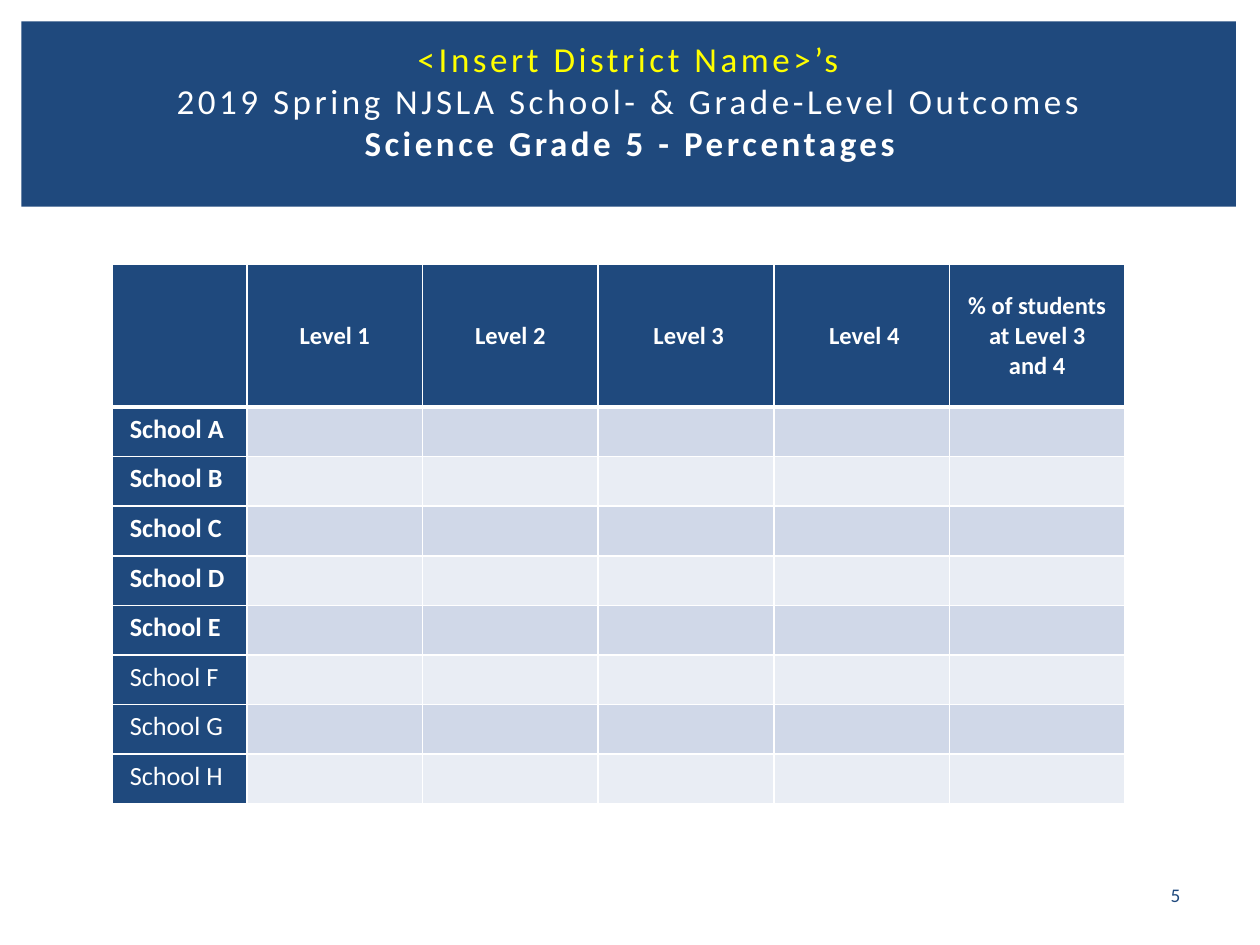
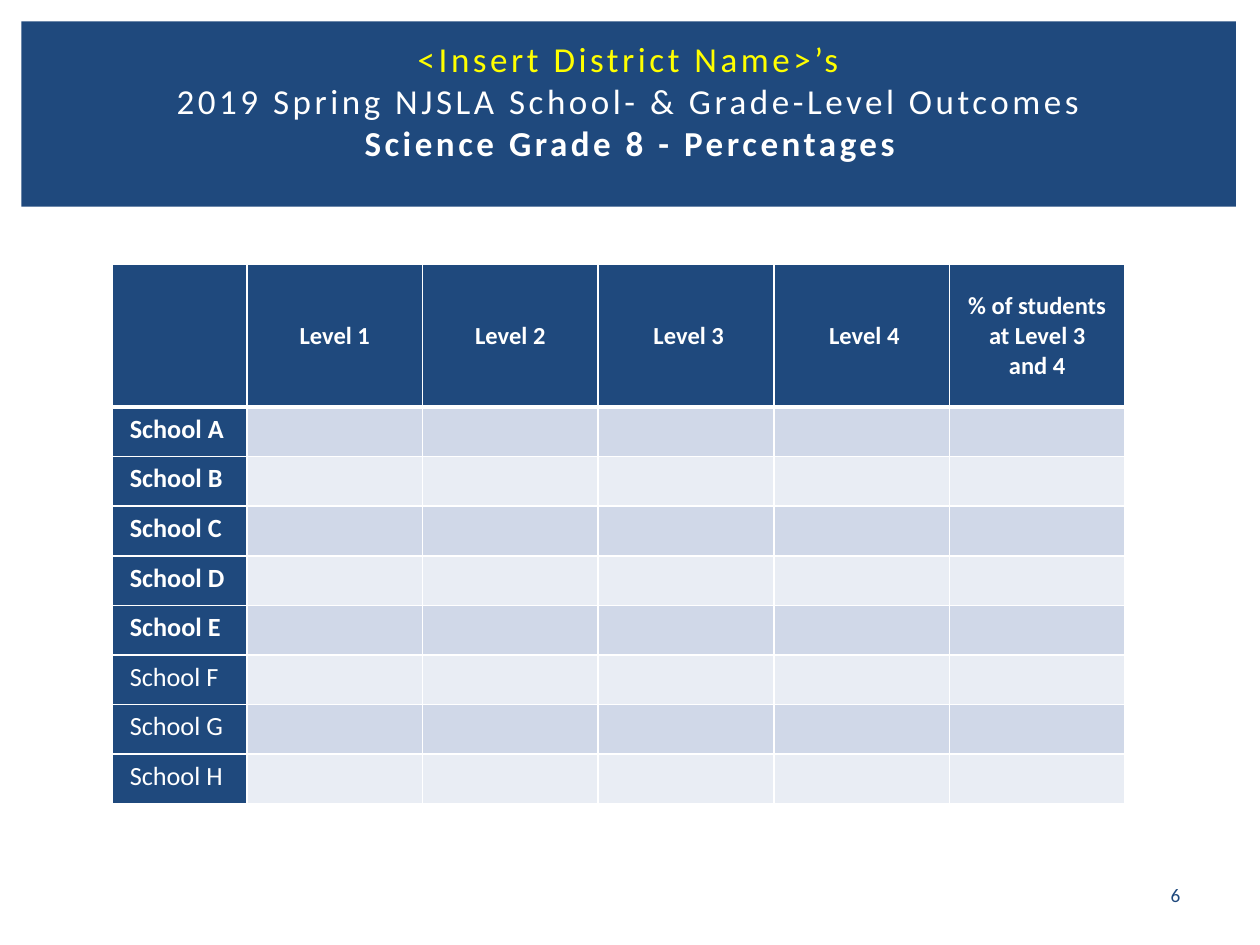
from dataclasses import dataclass
from typing import Any

from lxml import etree
from pptx import Presentation
from pptx import util as u
from pptx.dml.color import RGBColor
from pptx.enum import shapes, text
from pptx.oxml import ns

NAVY = RGBColor(0x1F, 0x49, 0x7D)
WHITE = RGBColor(0xFF, 0xFF, 0xFF)
YELLOW = RGBColor(0xFF, 0xFF, 0x00)
BANDS = (RGBColor(0xD0, 0xD8, 0xE8), RGBColor(0xE9, 0xED, 0xF4))

LEVELS = ("", "Level 1", "Level 2", " Level 3", " Level 4",
          "% of students at Level 3 and 4")
SCHOOLS = "ABCDEFGH"
BOLD = "ABCDE"

BASE = {"name": "Calibri", "bold": False}
TITLE = BASE | {"size": u.Pt(20)}
HEAD = BASE | {"size": u.Pt(14), "bold": True}
NAME = BASE | {"size": u.Pt(15)}
PAGE = BASE | {"size": u.Pt(11)}
INSET = {"margin_left": u.Inches(0.14), "margin_right": u.Inches(0.14),
         "margin_top": u.Inches(0.05), "margin_bottom": u.Inches(0.05)}
SLIM = {"margin_top": u.Inches(0.03), "margin_bottom": u.Inches(0.03)}


@dataclass(frozen=True)
class Box:
    left: float
    top: float
    width: float
    height: float

    def size(self) -> tuple[u.Length, ...]:
        return tuple(u.Inches(n) for n in
                     (self.left, self.top, self.width, self.height))


@dataclass(frozen=True)
class Report:
    grade: int
    page: int


BAND = Box(0.17, 0.17, 9.64, 1.47)
HEADING = Box(0.28, 0.39, 9.44, 1.15)
GRID = Box(0.89, 2.1, 8.04, 4.28)
FOOT = Box(9.01, 6.95, 0.64, 0.3)
SIDE = 1.07
TOP = 1.13
REPORTS = (Report(5, 5), Report(8, 6))


def apply(item: Any, form: dict[str, Any]) -> None:
    for key, val in form.items():
        setattr(item, key, val)


def write(para: Any, words: str, form: dict[str, Any], tint: RGBColor) -> Any:
    run = para.add_run()
    run.text = words
    apply(run.font, form)
    run.font.color.rgb = tint
    return run


def add_band(slide: Any) -> None:
    band = slide.shapes.add_shape(shapes.MSO_SHAPE.RECTANGLE, *BAND.size())
    band.shadow.inherit = False
    band.fill.solid()
    band.fill.fore_color.rgb = NAVY
    band.line.fill.background()
    slide.shapes.element.insert(2, band.element)


def add_title(slide: Any, grade: int) -> None:
    title = slide.shapes.title
    apply(title, dict(zip(("left", "top", "width", "height"), HEADING.size())))
    frame = title.text_frame
    apply(frame, {"auto_size": text.MSO_AUTO_SIZE.NONE, "word_wrap": True,
                  "vertical_anchor": text.MSO_ANCHOR.MIDDLE,
                  "margin_top": 0, "margin_bottom": u.Inches(0.33)})
    para = frame.paragraphs[0]
    para.alignment = text.PP_ALIGN.CENTER
    lines = (
        ("<Insert District Name>’s", YELLOW, False),
        ("2019 Spring NJSLA School- & Grade-Level Outcomes", WHITE, False),
        (f"Science Grade {grade} - Percentages", WHITE, True),
    )
    for spot, (words, tint, bold) in enumerate(lines):
        if spot:
            para.add_line_break()
        run = write(para, words, TITLE | {"bold": bold}, tint)
        run.font._element.set("spc", "200")


def add_edges(cell: Any, base: float) -> None:
    props = cell._tc.get_or_add_tcPr()
    sides = {"lnL": 1, "lnR": 1, "lnT": 1, "lnB": base}
    for spot, (side, width) in enumerate(sides.items()):
        line = etree.Element(ns.qn(f"a:{side}"), w=str(u.Pt(width)))
        fill = etree.SubElement(line, ns.qn("a:solidFill"))
        etree.SubElement(fill, ns.qn("a:srgbClr"), val=str(WHITE))
        props.insert(spot, line)


def fill_cell(cell: Any, row: int, col: int) -> None:
    head = row == 0
    cell.fill.solid()
    cell.fill.fore_color.rgb = NAVY if head or col == 0 else BANDS[(row - 1) % 2]
    add_edges(cell, 3 if head else 1)
    para = cell.text_frame.paragraphs[0]
    if head and col:
        apply(cell, INSET | {"vertical_anchor": text.MSO_ANCHOR.MIDDLE})
        para.alignment = text.PP_ALIGN.CENTER
        write(para, LEVELS[col], HEAD, WHITE)
    elif col == 0 and not head:
        mark = SCHOOLS[row - 1]
        apply(cell, INSET)
        write(para, f"School {mark}", NAME | {"bold": mark in BOLD}, WHITE)
    else:
        apply(cell, SLIM)


def add_grid(slide: Any) -> None:
    grid = slide.shapes.add_table(len(SCHOOLS) + 1, len(LEVELS),
                                  *GRID.size()).table
    wide = (GRID.width - SIDE) / (len(LEVELS) - 1)
    high = (GRID.height - TOP) / len(SCHOOLS)
    for spot, col in enumerate(grid.columns):
        col.width = u.Inches(wide if spot else SIDE)
    for spot, row in enumerate(grid.rows):
        row.height = u.Inches(high if spot else TOP)
        for col, cell in enumerate(row.cells):
            fill_cell(cell, spot, col)


def add_page(slide: Any, page: int) -> None:
    frame = slide.shapes.add_textbox(*FOOT.size()).text_frame
    apply(frame, {"word_wrap": True,
                  "vertical_anchor": text.MSO_ANCHOR.MIDDLE})
    para = frame.paragraphs[0]
    para.alignment = text.PP_ALIGN.CENTER
    write(para, str(page), PAGE, NAVY)


def main() -> None:
    deck = Presentation()
    apply(deck, {"slide_width": u.Inches(10), "slide_height": u.Inches(7.5)})
    layout = deck.slide_layouts.get_by_name("Title Only")
    for report in REPORTS:
        slide = deck.slides.add_slide(layout)
        add_band(slide)
        add_title(slide, report.grade)
        add_grid(slide)
        add_page(slide, report.page)
    deck.save("out.pptx")


if __name__ == "__main__":
    main()
